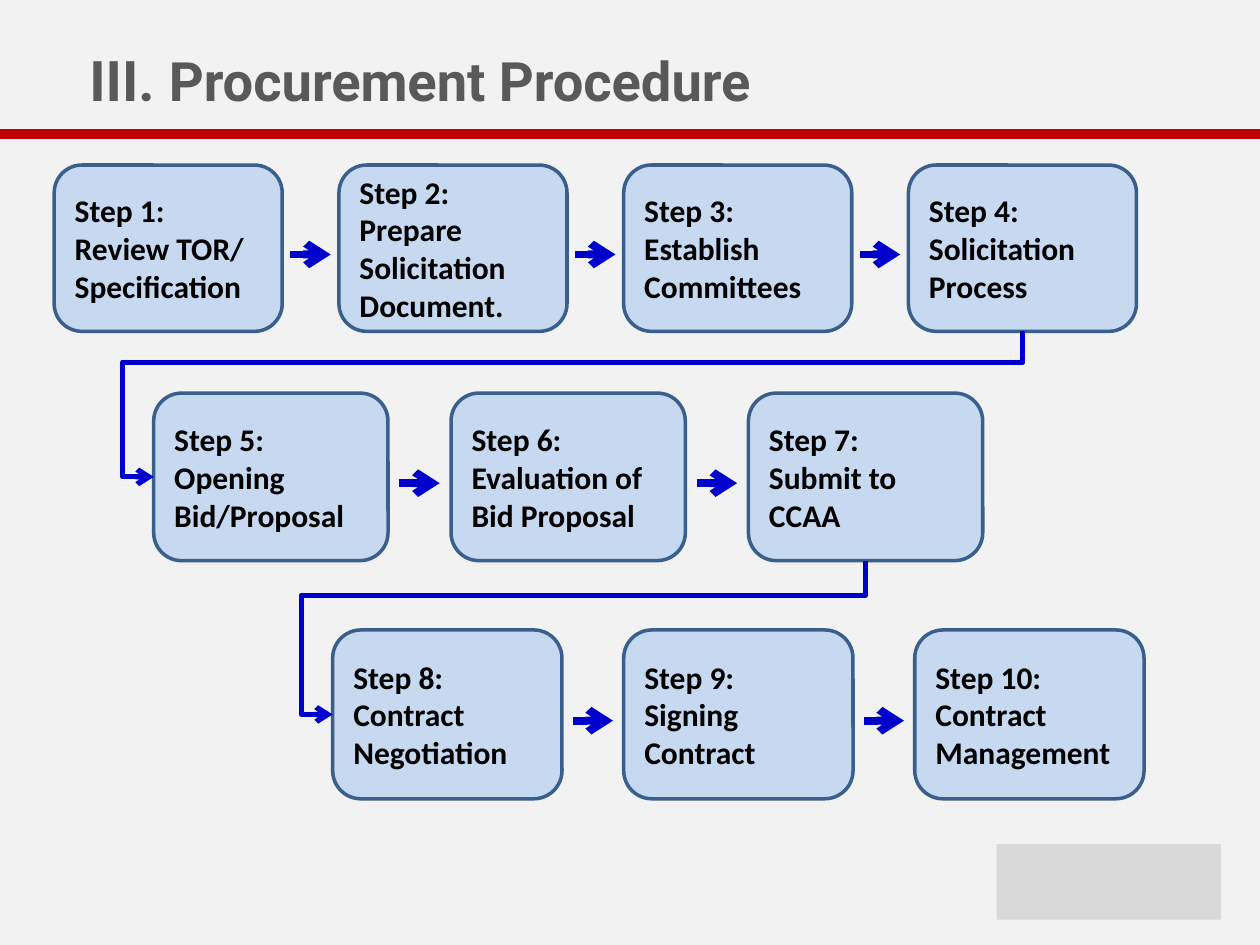
from dataclasses import dataclass

from lxml.etree import SubElement as Sub
from pptx import Presentation
from pptx.dml.color import RGBColor as Rgb
from pptx.enum.shapes import MSO_CONNECTOR as Link, MSO_SHAPE as Kind
from pptx.enum.text import MSO_ANCHOR as Anchor, PP_ALIGN as Align
from pptx.oxml.ns import qn
from pptx.util import Inches, Pt


@dataclass(frozen=True)
class Theme:
    back: str = "F2F2F2"
    bar: str = "C00000"
    head: str = "595959"
    box: str = "C6D9F1"
    edge: str = "3A5F8C"
    flow: str = "0000CC"
    ink: str = "000000"
    plain: str = "D9D9D9"
    title: str = "Roboto"
    body: str = "Calibri"
    step: float = 18


@dataclass(frozen=True)
class Row:
    """A row of steps: first left edge, pitch of columns, top, box size."""
    left: float
    pitch: float
    top: float
    wide: float
    high: float
    steps: tuple

    def x(self, col):
        return self.left + col * self.pitch

    @property
    def mid(self):
        return self.top + self.high / 2

    @property
    def base(self):
        return self.top + self.high


T = Theme()
WIDE, HIGH = 10, 7.5
ARROW = 0.32   # length of an arrow between two steps
DROP = 0.05    # arrows sit this far below the row's middle
SIDE = 0.25    # turn of a return line left of its target

ROWS = (
    Row(0.43, 2.26, 1.31, 1.81, 1.32, (
        "Review TOR/ Specification", "Prepare Solicitation Document.",
        "Establish Committees", "Solicitation Process")),
    Row(1.22, 2.36, 3.12, 1.86, 1.33, (
        "Opening Bid/Proposal", "Evaluation of Bid Proposal",
        "Submit to CCAA")),
    Row(2.64, 2.31, 5, 1.82, 1.34, (
        "Contract Negotiation", "Signing Contract", "Contract Management")),
)


def color(code):
    return Rgb.from_string(code)


def add_run(para, text, font, size, code):
    run = para.add_run()
    run.text = text
    run.font.name, run.font.size, run.font.bold = font, Pt(size), True
    run.font.color.rgb = color(code)


def add_title(slide):
    title = slide.shapes.title
    title.left, title.top = Inches(0.61), Inches(0.23)
    title.width, title.height = Inches(9), Inches(0.79)
    title.text_frame.vertical_anchor = Anchor.MIDDLE
    para = title.text_frame.paragraphs[0]
    para.alignment = Align.LEFT
    add_run(para, "III. ", T.title, 32, T.head)
    add_run(para, "Procurement Procedure", T.title, 31, T.head)


def add_block(slide, kind, x, y, w, h, fill, edge=None):
    block = slide.shapes.add_shape(kind, *map(Inches, (x, y, w, h)))
    block.shadow.inherit = False
    block.fill.solid()
    block.fill.fore_color.rgb = color(fill)
    if edge:
        block.line.color.rgb = color(edge)
        block.line.width = Pt(2)
    else:
        block.line.fill.background()
    return block


def add_step(slide, x, row, num, text):
    box = add_block(slide, Kind.ROUNDED_RECTANGLE, x, row.top,
                    row.wide, row.high, T.box, T.edge)
    frame = box.text_frame
    frame.word_wrap = True
    frame.vertical_anchor = Anchor.MIDDLE
    for para, words in ((frame.paragraphs[0], f"Step {num}:"),
                        (frame.add_paragraph(), text)):
        para.alignment = Align.LEFT
        add_run(para, words, T.body, T.step, T.ink)


def add_link(slide, kind, x1, y1, x2, y2, size):
    link = slide.shapes.add_connector(kind, *map(Inches, (x1, y1, x2, y2)))
    link.line.color.rgb = color(T.flow)
    link.line.width = Pt(size)
    Sub(link.line._get_or_add_ln(), qn("a:tailEnd"), type="arrow")
    Sub(link._element.spPr, qn("a:effectLst"))
    return link


def add_return(slide, row, nxt):
    """Line from under the last step of a row to the first of the next."""
    x1, y1 = row.x(len(row.steps) - 1) + row.wide / 2, row.base
    x2, y2 = nxt.left, nxt.mid
    w, h = y2 - y1, x1 - x2   # swapped, as the frame is turned by 90 degrees
    x, y = (x1 + x2 - w) / 2, (y1 + y2 - h) / 2
    link = add_link(slide, Link.ELBOW, x, y, x + w, y + h, 3)
    props = link._element.spPr
    props.find(qn("a:xfrm")).set("rot", str(90 * 60000))
    geom = props.find(qn("a:prstGeom"))
    geom.set("prst", "bentConnector4")
    bends = geom.find(qn("a:avLst"))
    if bends is None:
        bends = Sub(geom, qn("a:avLst"))
    halfway = (nxt.top - row.base) / 2
    for name, share in (("adj1", halfway / w), ("adj2", 1 + SIDE / h)):
        Sub(bends, qn("a:gd"), name=name, fmla=f"val {round(share * 100000)}")


def main():
    deck = Presentation()
    deck.slide_width, deck.slide_height = Inches(WIDE), Inches(HIGH)
    slide = deck.slides.add_slide(deck.slide_layouts[5])
    slide.background.fill.solid()
    slide.background.fill.fore_color.rgb = color(T.back)

    # Title, bar below it and plain block in the corner
    add_block(slide, Kind.FLOWCHART_PROCESS, 0, 1.02, WIDE, 0.08, T.bar)
    add_block(slide, Kind.RECTANGLE, 7.91, 6.7, 1.78, 0.6, T.plain)
    add_title(slide)

    # Steps, with an arrow centred in each gap
    num = 0
    for row in ROWS:
        for col, text in enumerate(row.steps):
            num += 1
            add_step(slide, row.x(col), row, num, text)
            if col:
                mid = (row.x(col - 1) + row.wide + row.x(col)) / 2
                y = row.mid + DROP
                add_link(slide, Link.STRAIGHT, mid - ARROW / 2, y,
                         mid + ARROW / 2, y, 4.5)

    # Return lines between rows
    for row, nxt in zip(ROWS, ROWS[1:]):
        add_return(slide, row, nxt)

    deck.save("out.pptx")


if __name__ == "__main__":
    main()
